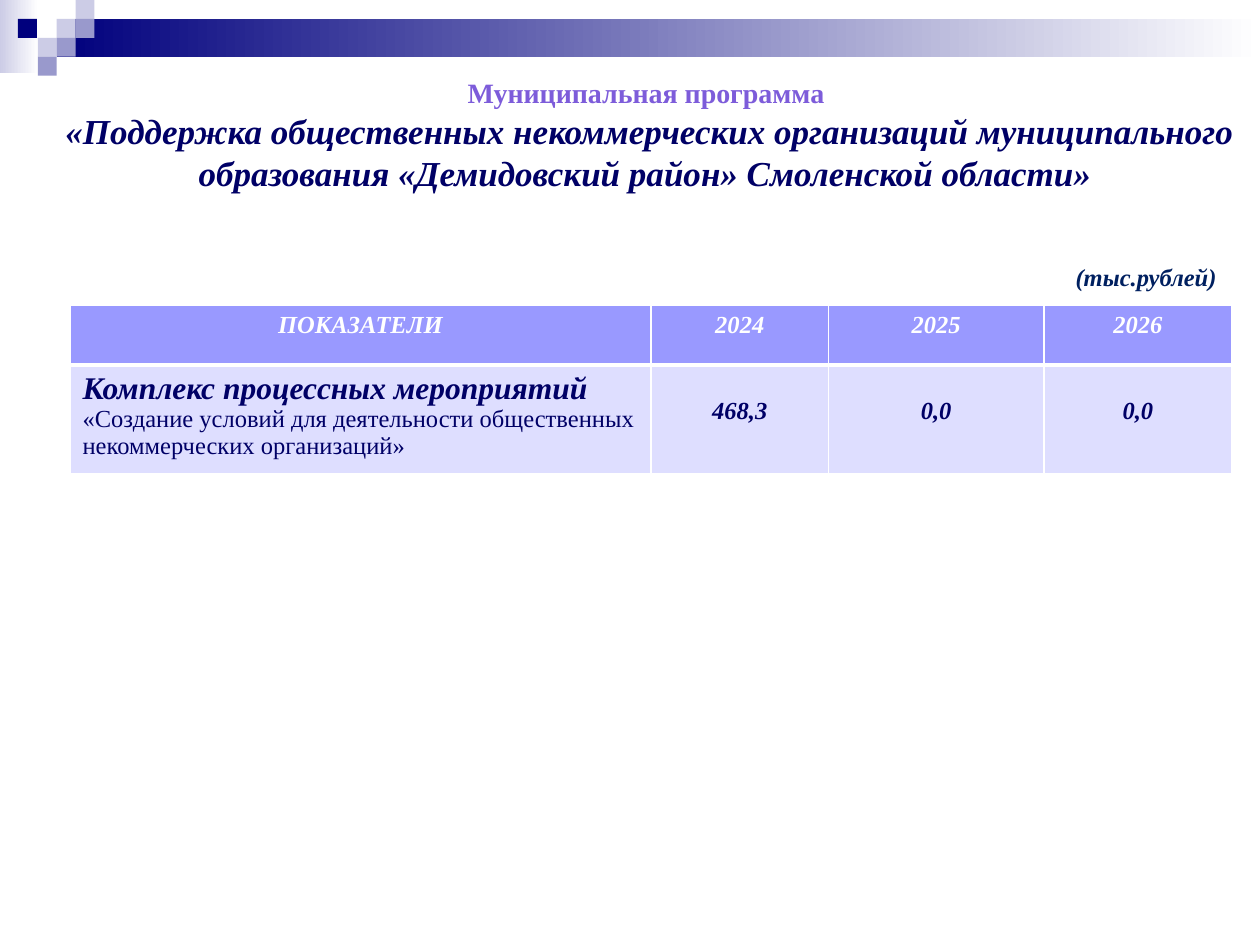
import pptx
import pptx.util
import pptx.dml.color
import pptx.enum.shapes
import pptx.enum.text
import pptx.oxml
import pptx.oxml.ns
from lxml import etree

Pt = pptx.util.Pt
ALIGN = pptx.enum.text.PP_ALIGN
LEFT, CENTER = ALIGN.LEFT, ALIGN.CENTER

NAVY, LILAC, PALE, WHITE = "00007D", "9999CC", "CCCCE6", "FFFFFF"
INK, VIOLET, NOTE = "000066", "7D5CDA", "002060"
HEAD_FILL, BODY_FILL = "9999FF", "DEDEFF"


def rgb(value):
    return pptx.dml.color.RGBColor.from_string(value)


class Deck:
    font = "Times New Roman"

    def __init__(self, width, height):
        self.prs = pptx.Presentation()
        self.prs.slide_width, self.prs.slide_height = Pt(width), Pt(height)
        self.s = self.prs.slides.add_slide(self.prs.slide_layouts[6])

    def rect(self, x, y, w, h, *colors):
        """Rectangle filled with one colour, or left to right with two."""
        sp = self.s.shapes.add_shape(
            pptx.enum.shapes.MSO_SHAPE.RECTANGLE, Pt(x), Pt(y), Pt(w), Pt(h))
        sp.shadow.inherit = False
        sp.line.fill.background()
        if len(colors) == 1:
            sp.fill.solid()
            sp.fill.fore_color.rgb = rgb(colors[0])
            return
        sp.fill.gradient()
        sp.fill.gradient_angle = 0
        for position, (stop, color) in enumerate(zip(sp.fill.gradient_stops, colors)):
            stop.position = position
            stop.color.rgb = rgb(color)

    def paragraph(self, p, runs, align):
        """Fill p with runs given as (text, size, colour, bold, italic)."""
        p.alignment = align
        for text, size, color, bold, italic in runs:
            r = p.add_run()
            r.text = text
            r.font.name, r.font.size = self.font, Pt(size)
            r.font.bold, r.font.italic = bold, italic
            r.font.color.rgb = rgb(color)

    def text(self, x, y, w, h, paragraphs, align=LEFT, wrap=True):
        tf = self.s.shapes.add_textbox(Pt(x), Pt(y), Pt(w), Pt(h)).text_frame
        tf.word_wrap = wrap
        for i, runs in enumerate(paragraphs):
            p = tf.add_paragraph() if i else tf.paragraphs[0]
            self.paragraph(p, runs, align)

    def table(self, x, y, widths, heights):
        tbl = self.s.shapes.add_table(
            len(heights), len(widths), Pt(x), Pt(y),
            Pt(sum(widths)), Pt(sum(heights))).table
        for column, width in zip(tbl.columns, widths):
            column.width = Pt(width)
        for row, height in zip(tbl.rows, heights):
            row.height = Pt(height)
        return tbl

    def cell(self, cell, runs, fill, align=CENTER, top=3.6, edges=None):
        """Write a cell; edges maps border tags to widths other than 1 pt."""
        cell.margin_top = Pt(top)
        self.paragraph(cell.text_frame.paragraphs[0], runs, align)
        tc_pr = cell._tc.get_or_add_tcPr()
        for tag in ("lnL", "lnR", "lnT", "lnB"):
            ln = etree.SubElement(tc_pr, pptx.oxml.ns.qn("a:" + tag))
            ln.set("w", str(Pt((edges or {}).get(tag, 1))))
            solid = etree.SubElement(ln, pptx.oxml.ns.qn("a:solidFill"))
            etree.SubElement(solid, pptx.oxml.ns.qn("a:srgbClr")).set("val", WHITE)
        cell.fill.solid()
        cell.fill.fore_color.rgb = rgb(fill)


def main():
    deck = Deck(720, 540)

    unit = 10.8
    deck.rect(0, 0, 22, 42, PALE, WHITE)
    deck.rect(3 * unit, unit, 720 - 3 * unit, 2 * unit, NAVY, WHITE)
    squares = [(3, 1, PALE), (4, 0, PALE), (4, 1, LILAC), (2, 2, PALE),
               (0.95, 1, NAVY), (3, 2, LILAC), (2, 3, LILAC)]
    for column, row, color in squares:
        deck.rect(column * unit, row * unit, unit, unit, color)

    deck.text(22.3, 39.6, 697.7, 75, [
        [("Муниципальная программа ", 16, VIOLET, True, False)],
        [("«Поддержка общественных некоммерческих организаций муниципального "
          "образования «Демидовский район» Смоленской области» ",
          20, INK, True, True)],
    ], CENTER)

    tbl = deck.table(40, 174.5, [332, 101.5, 123, 107.5], [34, 62])
    for i, head in enumerate(["ПОКАЗАТЕЛИ", "2024", "2025", "2026"]):
        deck.cell(tbl.cell(0, i), [(head, 14, WHITE, True, True)], HEAD_FILL,
                  edges={"lnB": 3})
    below_head = {"lnT": 3}
    deck.cell(tbl.cell(1, 0), [
        ("Комплекс процессных мероприятий ", 18, INK, True, True),
        ("«Создание условий для деятельности общественных "
         "некоммерческих организаций»", 14, INK, False, False),
    ], BODY_FILL, LEFT, edges=below_head)
    for i, value in enumerate(["468,3", "0,0", "0,0"], 1):
        deck.cell(tbl.cell(1, i), [(value, 14, INK, True, True)], BODY_FILL,
                  top=19, edges=below_head)

    deck.text(607.5, 146, 96, 24.5,
              [[("(тыс.рублей)", 14, NOTE, True, True)]], wrap=False)

    deck.prs.save("out.pptx")


if __name__ == "__main__":
    main()
